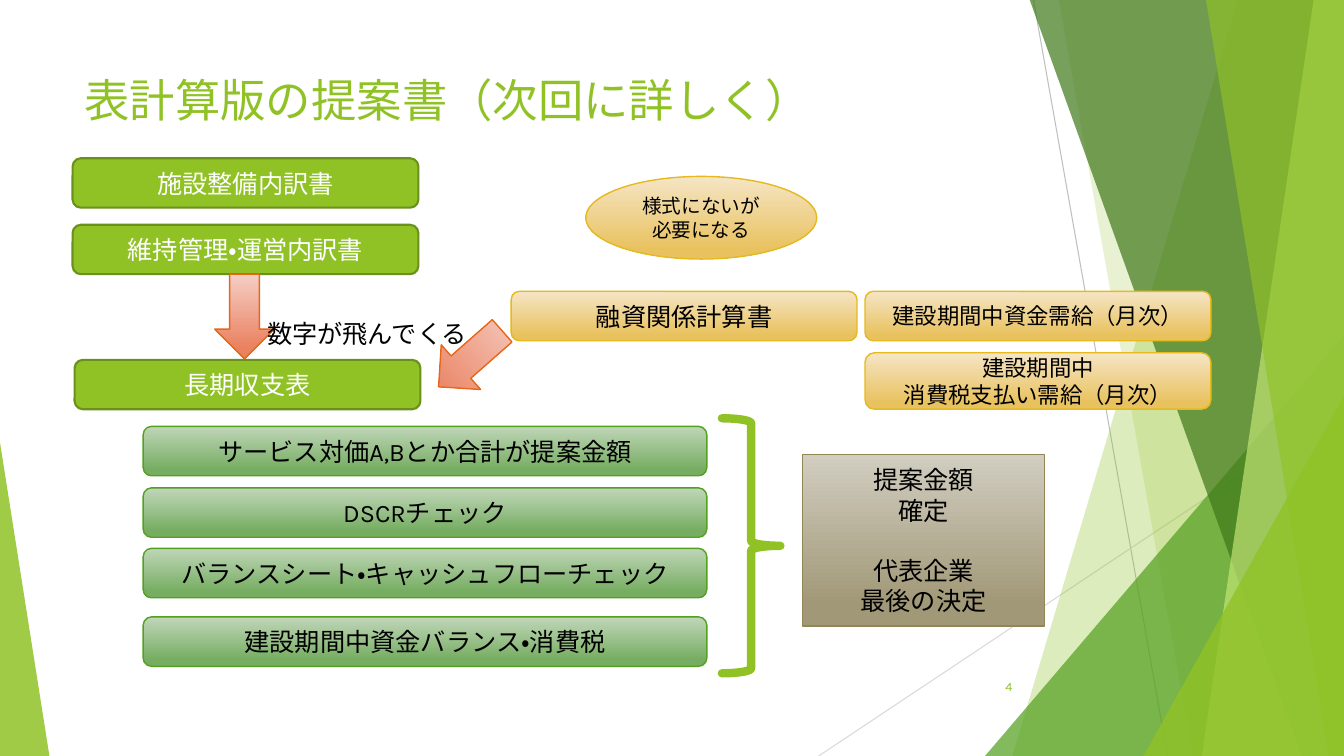
from lxml.etree import SubElement
from pptx import Presentation
from pptx.dml.color import RGBColor
from pptx.enum.lang import MSO_LANGUAGE_ID
from pptx.enum.shapes import MSO_CONNECTOR, MSO_SHAPE
from pptx.enum.text import MSO_ANCHOR, PP_ALIGN
from pptx.oxml.ns import qn
from pptx.util import Inches, Pt

FONT = "Karla"
COLORS = {
    "lime": "90C226", "edge": "6B901C", "green": "54A021", "deep": "3F7819",
    "pale": "C0E474", "gray": "BFBFBF", "silver": "D9D9D9",
    "white": "FFFFFF", "black": "000000",
}
# look: top colour, lower colour, line colour
GRADS = {
    "red": ("F5CEC5", "EA815F", "E76618"),
    "gold": ("F5E5C5", "E9C260", "E6B91E"),
    "leaf": ("C0D6B9", "76AD61", "54A021"),
    "stone": ("D1CDC0", "A19877", "918655"),
}

# Background: lines, then panels from back to front
RAYS = [((10.25, 0), (11.58, 7.5), "gray"), ((13.33, 4.03), (8.12, 7.5), "silver")]
# panel: top left x, top right x, bottom right x, bottom left x, colour, opacity
BACK = [(12.28, 13.33, 13.33, 10.04, "lime", 30), (10.5, 13.33, 13.33, 11.83, "lime", 20)]
FRONT = [
    (10.21, 13.33, 13.33, 12.91, "deep", 70),
    (13.03, 13.33, 13.33, 11.92, "pale", 70),
    (11.96, 13.33, 13.33, 13.18, "lime", 65),
]
# wedge: left, top, width, apex, colour, opacity
MIDDLE = [(9.77, 3.33, 3.56, 1, "green", 72)]
CORNERS = [(11.34, 3.93, 1.99, 1, "lime", 80), (0, 4.39, 0.49, 0, "lime", 85)]

TITLE = "表計算版の提案書（次回に詳しく）"
PAGE = "4"
LABEL = "数字が飛んでくる"
SHEETS = [
    (0.72, 1.57, "施設整備内訳書"),
    (0.72, 2.23, "維持管理・運営内訳書"),
    (0.74, 3.57, "長期収支表"),
]
FUNDS = [
    (5.07, 2.89, 0.49, 18, "融資関係計算書"),
    (8.58, 2.89, 0.49, 16, "建設期間中資金需給（月次）"),
    (8.58, 3.5, 0.56, 16, "建設期間中\n消費税支払い需給（月次）"),
]
CHECKS = [
    (4.23, "サービス対価A,Bとか合計が提案金額"),
    (4.84, "DSCRチェック"),
    (5.44, "バランスシート・キャッシュフローチェック"),
    (6.12, "建設期間中資金バランス・消費税"),
]
NOTE = "様式にないが\n必要になる"
RESULT = "提案金額\n確定\n代表企業\n最後の決定"
ARROWS = [(2.13, 2.72, 0), (4.37, 3.14, 48.6)]
BAR_W, BAR_H = 3.43, 0.49

deck = Presentation()
deck.slide_width, deck.slide_height = Inches(13.33), Inches(7.5)
slide = deck.slides.add_slide(deck.slide_layouts[6])
shapes = slide.shapes


def paint(name):
    return RGBColor.from_string(COLORS.get(name, name))


def write(shape, text, size, color, align=PP_ALIGN.CENTER):
    frame = shape.text_frame
    frame.text = text
    frame.word_wrap = True
    for para in frame.paragraphs:
        para.alignment = align
        for run in para.runs:
            font = run.font
            font.name, font.size = FONT, Pt(size)
            font.color.rgb = paint(color)
            font.language_id = MSO_LANGUAGE_ID.JAPANESE
    return frame


def label(box, text, size, color, align=PP_ALIGN.LEFT):
    return write(shapes.add_textbox(*map(Inches, box)), text, size, color, align)


def outline(shape, color, width):
    shape.line.color.rgb = paint(color)
    shape.line.width = Pt(width)


def add(kind, box):
    shape = shapes.add_shape(kind, *map(Inches, box))
    shape.shadow.inherit = False
    return shape


def shade(kind, box, look):
    """Add a shape with a vertical gradient and a thin outline."""
    shape = add(kind, box)
    *tones, edge = GRADS[look]
    shape.fill.gradient()
    shape.fill.gradient_angle = 270
    for stop, tone, place in zip(shape.fill.gradient_stops, tones, (0, 0.88)):
        stop.color.rgb = paint(tone)
        stop.position = place
    outline(shape, edge, 1)
    return shape


def glaze(shape, color, alpha):
    """Fill with a see-through colour and drop the outline."""
    shape.shadow.inherit = False
    shape.fill.solid()
    shape.fill.fore_color.rgb = paint(color)
    tint = shape.fill._xPr.find(qn("a:solidFill"))[0]
    SubElement(tint, qn("a:alpha")).set("val", str(alpha * 1000))
    shape.line.fill.background()


def panels(rows):
    for left, right, end, start, color, alpha in rows:
        path = shapes.build_freeform(Inches(left), Inches(-0.01))
        corners = [(right, -0.01), (end, 7.5), (start, 7.5)]
        path.add_line_segments([(Inches(x), Inches(y)) for x, y in corners])
        glaze(path.convert_to_shape(), color, alpha)


def wedges(rows):
    for left, top, width, apex, color, alpha in rows:
        shape = add(MSO_SHAPE.ISOSCELES_TRIANGLE, (left, top, width, 7.5 - top))
        shape.adjustments[0] = apex
        glaze(shape, color, alpha)


for head, tail, color in RAYS:
    ray = shapes.add_connector(MSO_CONNECTOR.STRAIGHT, *map(Inches, head + tail))
    outline(ray, color, 0.75)
    SubElement(ray._element.spPr, qn("a:effectLst"))
panels(BACK)
wedges(MIDDLE)
panels(FRONT)
wedges(CORNERS)

label((0.74, 0.67, 9.4, 0.52), TITLE, 32.4, "lime")
page = label((9.39, 6.61, 0.75, 0.4), PAGE, 9, "lime", PP_ALIGN.RIGHT)
page.vertical_anchor = MSO_ANCHOR.MIDDLE

for left, top, text in SHEETS:
    bar = add(MSO_SHAPE.ROUNDED_RECTANGLE, (left, top, BAR_W, BAR_H))
    bar.fill.solid()
    bar.fill.fore_color.rgb = paint("lime")
    outline(bar, "edge", 1.5)
    write(bar, text, 18, "white")

for left, top, turn in ARROWS:
    arrow = shade(MSO_SHAPE.DOWN_ARROW, (left, top, 0.59, 0.84), "red")
    arrow.rotation = turn
label((2.55, 3.11, 2.35, 0.4), LABEL, 18, "black")

for left, top, height, size, text in FUNDS:
    box = (left, top, BAR_W, height)
    write(shade(MSO_SHAPE.ROUNDED_RECTANGLE, box, "gold"), text, size, "black")
write(shade(MSO_SHAPE.OVAL, (5.81, 1.75, 2.29, 0.82), "gold"), NOTE, 14, "black")

for top, text in CHECKS:
    box = (1.42, top, 5.59, BAR_H)
    write(shade(MSO_SHAPE.ROUNDED_RECTANGLE, box, "leaf"), text, 18, "black")

brace = add(MSO_SHAPE.RIGHT_BRACE, (7.16, 4.15, 0.58, 2.53))
brace.fill.background()
outline(brace, "lime", 6)
brace.line._ln.set("cap", "rnd")

result = shade(MSO_SHAPE.RECTANGLE, (7.96, 4.51, 2.4, 1.7), "stone")
frame = write(result, RESULT, 18, "black")
frame.paragraphs[2].space_before = Pt(21.5)

deck.save("out.pptx")
